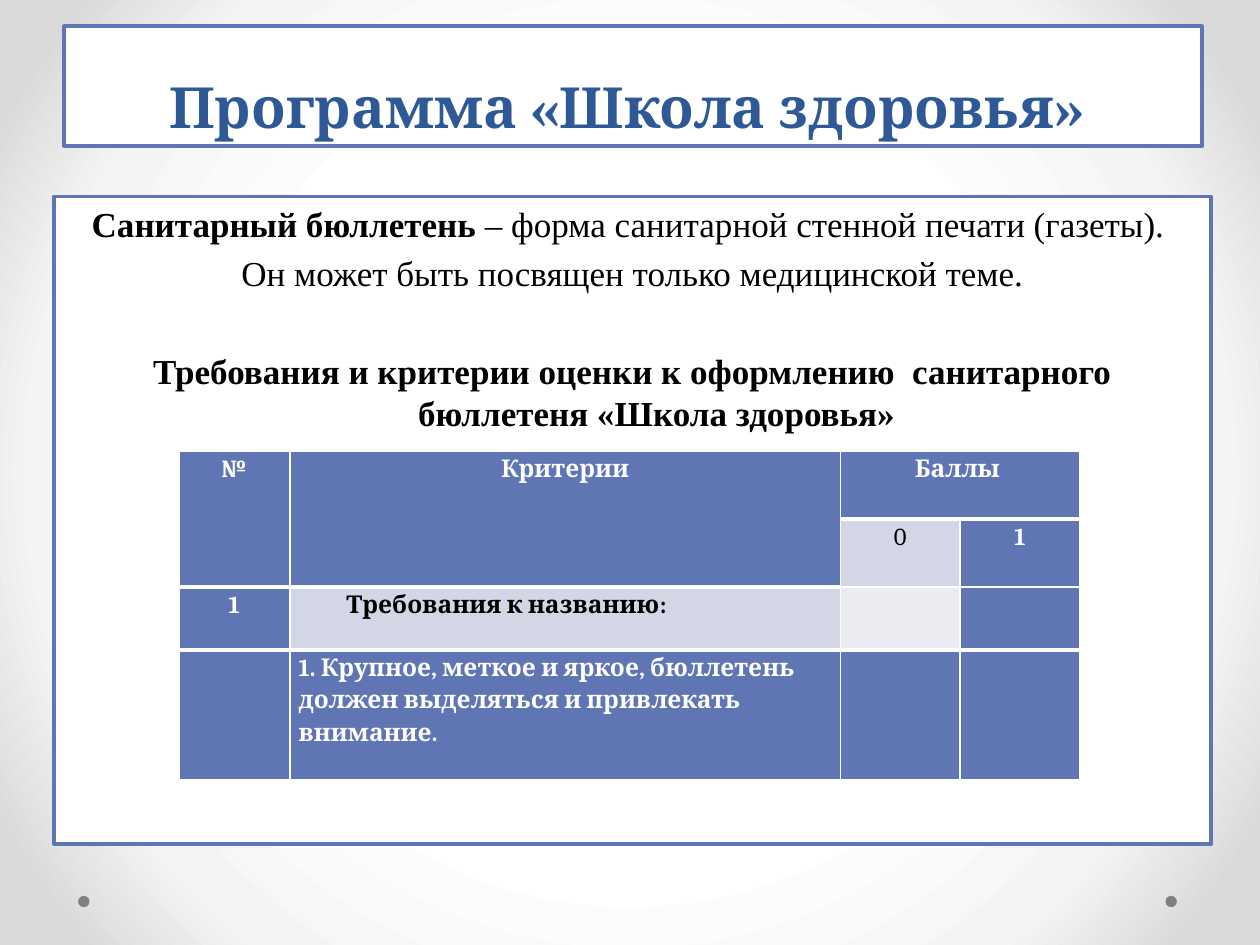
from lxml import etree
from pptx import Presentation, util as u
from pptx.dml.color import RGBColor
from pptx.enum import shapes, text
from pptx.oxml import parse_xml
from pptx.oxml.ns import qn

BLUE, WHITE, BLACK = "6076B4", "FFFFFF", "000000"
PALE, PALER = "D2D6E5", "EAECF2"
ALIGN = text.PP_ALIGN
NAMESPACES = (
    'xmlns:a="http://schemas.openxmlformats.org/drawingml/2006/main" '
    'xmlns:p="http://schemas.openxmlformats.org/presentationml/2006/main"'
)


def color(value):
    return RGBColor.from_string(value)


class SlideBuilder:
    heading_font = "Cambria"
    body_font = "Times New Roman"

    def __init__(self, slide):
        self.slide = slide

    def background(self, stops):
        """Radial gradient from the centre; stops are (percent, colour)."""
        stop_xml = "".join(
            f'<a:gs pos="{percent * 1000}"><a:srgbClr val="{value}"/></a:gs>'
            for percent, value in stops
        )
        self.slide._element.cSld.insert(0, parse_xml(
            f'<p:bg {NAMESPACES}><p:bgPr><a:gradFill rotWithShape="1">'
            f'<a:gsLst>{stop_xml}</a:gsLst><a:path path="circle">'
            '<a:fillToRect l="50000" t="50000" r="50000" b="50000"/></a:path>'
            '</a:gradFill><a:effectLst/></p:bgPr></p:bg>'
        ))

    def shape(self, kind, box, fill, line=None):
        shape = self.slide.shapes.add_shape(kind, *map(u.Inches, box))
        shape.shadow.inherit = False
        shape.fill.solid()
        shape.fill.fore_color.rgb = color(fill)
        if line:
            shape.line.color.rgb = color(line)
            shape.line.width = u.Pt(2.25)
        else:
            shape.line.fill.background()
        return shape

    def dot(self, left):
        self.shape(shapes.MSO_SHAPE.OVAL, (left, 7.11, 0.09, 0.09), "808080")

    def panel(self, box, anchor):
        """White framed box; gives back its text frame."""
        frame = self.shape(shapes.MSO_SHAPE.RECTANGLE, box, WHITE, BLUE).text_frame
        frame.word_wrap = True
        frame.vertical_anchor = anchor
        return frame

    def format_run(self, run, font, size, value, bold):
        run.font.name = font
        run.font.size = u.Pt(size)
        run.font.bold = bold
        run.font.color.rgb = color(value)

    def title(self, box, words):
        frame = self.panel(box, text.MSO_ANCHOR.BOTTOM)
        frame.text = words
        paragraph = frame.paragraphs[0]
        paragraph.alignment = ALIGN.CENTER
        paragraph.line_spacing = u.Pt(58)
        self.format_run(paragraph.runs[0], self.heading_font, 32.4, "2F5897", True)

    def body(self, box, paragraphs):
        """Each paragraph is (space before, [(words, bold), ...])."""
        frame = self.panel(box, text.MSO_ANCHOR.TOP)
        for index, (space, runs) in enumerate(paragraphs):
            paragraph = frame.add_paragraph() if index else frame.paragraphs[0]
            paragraph.alignment = ALIGN.CENTER
            paragraph.space_before = u.Pt(space)
            self.indent(paragraph, 0.38, -0.38)
            for words, bold in runs:
                run = paragraph.add_run()
                run.text = words
                self.format_run(run, self.body_font, 20, BLACK, bold)

    def indent(self, paragraph, left, first):
        properties = paragraph._p.get_or_add_pPr()
        properties.set("marL", str(u.Inches(left)))
        properties.set("indent", str(u.Inches(first)))

    def border(self, cell, side, width):
        line = etree.SubElement(cell._tc.get_or_add_tcPr(), qn(f"a:ln{side}"),
                                w=str(u.Pt(width)))
        fill = etree.SubElement(line, qn("a:solidFill"))
        etree.SubElement(fill, qn("a:srgbClr"), val=WHITE)

    def cell(self, cell, fill, widths, words="", align=ALIGN.CENTER, bold=True):
        for side, width in widths.items():
            self.border(cell, side, width)
        cell.fill.solid()
        cell.fill.fore_color.rgb = color(fill)
        cell.margin_left = cell.margin_right = u.Inches(0.07)
        cell.margin_top = cell.margin_bottom = 0
        if not words:
            return
        cell.text = words
        paragraph = cell.text_frame.paragraphs[0]
        paragraph.alignment = align
        paragraph.line_spacing = 1.15
        paragraph.space_after = u.Pt(10)
        if align == ALIGN.JUSTIFY:
            self.indent(paragraph, 0, 0.38)
        self.format_run(paragraph.runs[0], self.heading_font, 14,
                        WHITE if fill == BLUE else BLACK, bold)

    def table(self, left, top, columns, rows, merges, cells):
        """Cells map (row, column) to the arguments of cell()."""
        table = self.slide.shapes.add_table(
            len(rows), len(columns), u.Inches(left), u.Inches(top),
            u.Inches(sum(columns)), u.Inches(sum(rows))).table
        for column, width in zip(table.columns, columns):
            column.width = u.Inches(width)
        for row, height in zip(table.rows, rows):
            row.height = u.Inches(height)
        for first, last in merges:
            table.cell(*first).merge(table.cell(*last))
        last_row = len(rows) - 1
        for row in range(len(rows)):
            widths = {"L": 1, "R": 1, "T": 3 if row in (1, last_row) else 1,
                      "B": 3 if row in (0, last_row - 1) else 1}
            for column in range(len(columns)):
                options = cells.get((row, column), {})
                self.cell(table.cell(row, column),
                          **{"fill": BLUE, "widths": widths, **options})


def main():
    presentation = Presentation()
    presentation.slide_width = u.Inches(10)
    presentation.slide_height = u.Inches(7.5)
    builder = SlideBuilder(presentation.slides.add_slide(presentation.slide_layouts[6]))

    builder.background([(50, WHITE), (76, "F4F4F4"), (92, "DADADA")])
    for left in (9.25, 0.62):
        builder.dot(left)
    builder.title((0.51, 0.21, 9.03, 0.95), "Программа «Школа здоровья» ")
    builder.body((0.43, 1.56, 9.18, 5.14), [
        (4, [("Санитарный бюллетень ", True),
             ("– форма санитарной стенной печати (газеты). ", False)]),
        (4, [("Он может быть посвящен только медицинской теме.", False)]),
        (32, [("Требования и критерии оценки к оформлению  санитарного "
               "бюллетеня «Школа здоровья»", True)]),
    ])
    builder.table(
        1.42, 3.58, [0.88, 4.37, 0.95, 0.95], [0.54, 0.54, 0.5, 1.03],
        merges=[((0, 0), (1, 0)), ((0, 1), (1, 1)), ((0, 2), (0, 3))],
        cells={
            (0, 0): {"words": "№"},
            (0, 1): {"words": "Критерии"},
            (0, 2): {"words": "Баллы "},
            (1, 2): {"words": "0", "fill": PALE, "bold": False},
            (1, 3): {"words": "1"},
            (2, 0): {"words": "1"},
            (2, 1): {"words": "Требования к названию:", "fill": PALE,
                     "align": ALIGN.JUSTIFY},
            (2, 2): {"fill": PALER},
            (3, 1): {"words": "1. Крупное, меткое и яркое, бюллетень должен "
                              "выделяться и привлекать внимание.",
                     "align": ALIGN.LEFT},
        })
    presentation.save("out.pptx")


if __name__ == "__main__":
    main()
